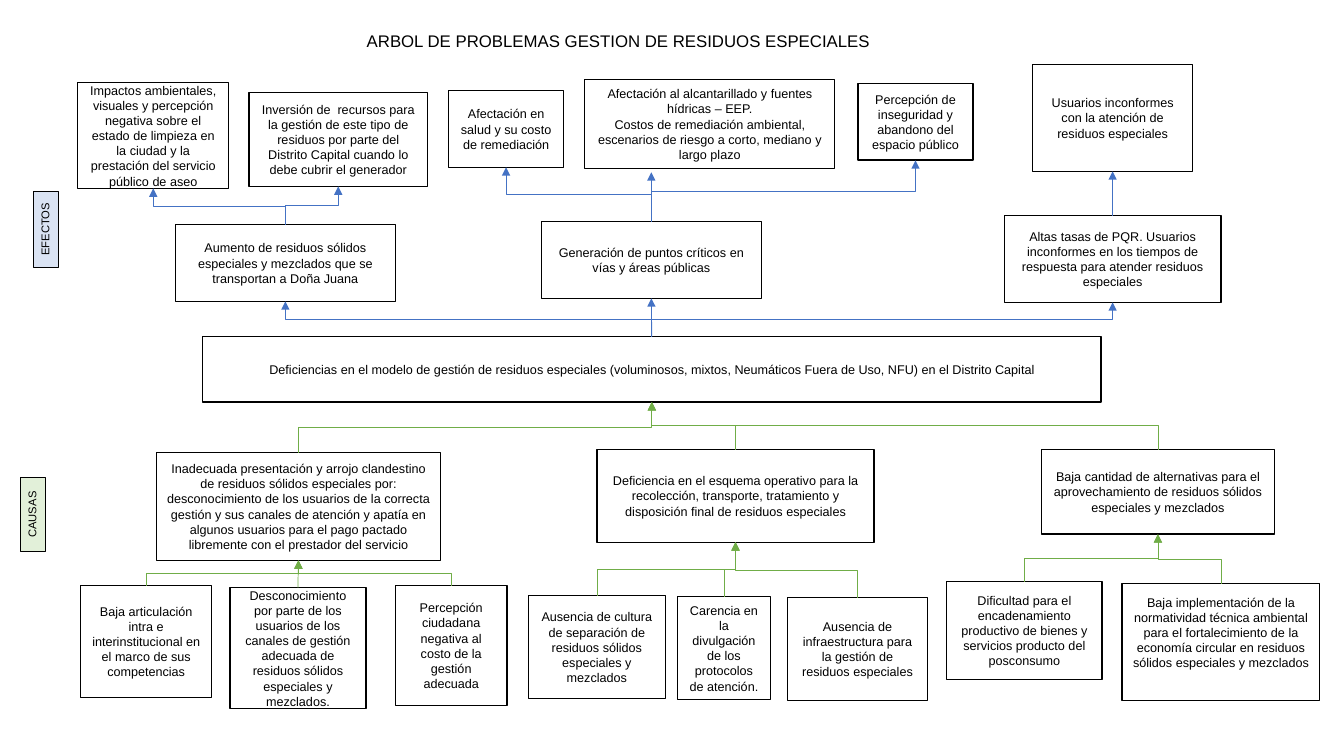
"""Build the problem tree slide on special waste management."""
from lxml import etree
from pptx import Presentation
from pptx import util as u
from pptx.dml.color import RGBColor
from pptx.enum import shapes, text
from pptx.oxml import ns

CELL = u.Inches(0.1)
BLACK, WHITE = "000000", "FFFFFF"
EFFECT_LINE, CAUSE_LINE = "4472C4", "70AD47"
TOP, BOTTOM = 0, 2

BOXES = {
    "problem": (20.1, 33.4, 89.1, 6.5, "Deficiencias en el modelo de gestión de residuos especiales (voluminosos, mixtos, Neumáticos Fuera de Uso, NFU) en el Distrito Capital"),
    "disposal": (17.4, 22.3, 21.8, 7.6, "Aumento de residuos sólidos especiales y mezclados que se transportan a Doña Juana"),
    "hotspots": (53.7, 22, 21.8, 7.6, "Generación de puntos críticos en vías y áreas públicas"),
    "complaints": (99.6, 21.4, 21.5, 8.6, "Altas tasas de PQR. Usuarios inconformes en los tiempos de respuesta para atender residuos especiales"),
    "impacts": (7.7, 8.2, 15, 10.5, "Impactos ambientales, visuales y percepción negativa sobre el estado de limpieza en la ciudad y la prestación del servicio público de aseo"),
    "spending": (24.7, 9.2, 17.7, 9.3, "Inversión de  recursos para la gestión de este tipo de residuos por parte del Distrito Capital cuando lo debe cubrir el generador"),
    "health": (44.5, 9, 11.4, 7.6, "Afectación en salud y su costo de remediación"),
    "water": (58, 7.9, 24.8, 8.8, "Afectación al alcantarillado y fuentes hídricas – EEP.\nCostos de remediación ambiental, escenarios de riesgo a corto, mediano y largo plazo"),
    "insecurity": (85.1, 8.3, 11.4, 7.6, "Percepción de inseguridad y abandono del espacio público"),
    "unhappy": (102.4, 6.4, 15.9, 10.6, "Usuarios inconformes con la atención de residuos especiales"),
    "dumping": (15.5, 44.9, 28.2, 10.7, "Inadecuada presentación y arrojo clandestino de residuos sólidos especiales por: desconocimiento de los usuarios de la correcta gestión y sus canales de atención y apatía en algunos usuarios para el pago pactado libremente con el prestador del servicio"),
    "operation": (59.2, 44.6, 27.5, 9.2, "Deficiencia en el esquema operativo para la recolección, transporte, tratamiento y disposición final de residuos especiales"),
    "recovery": (103.3, 44.6, 23.1, 8.4, "Baja cantidad de alternativas para el aprovechamiento de residuos sólidos especiales y mezclados"),
    "coordination": (8, 58.1, 13, 11.1, "Baja articulación intra e interinstitucional en el marco de sus competencias"),
    "unawareness": (22.8, 58.3, 13.5, 12, "Desconocimiento por parte de los usuarios de los canales de gestión adecuada de residuos sólidos especiales y mezclados."),
    "cost": (39.2, 58.1, 11.1, 11.9, "Percepción ciudadana negativa al costo de la gestión adecuada"),
    "separation": (52.4, 59.1, 13.6, 10.2, "Ausencia de cultura de separación de residuos sólidos especiales y mezclados"),
    "outreach": (67.2, 59.2, 9.2, 10.2, "Carencia en la divulgación de los protocolos de atención."),
    "facilities": (78.1, 59.3, 13.9, 10.2, "Ausencia de infraestructura para la gestión de residuos especiales"),
    "chains": (93.9, 57.7, 15.4, 9.7, "Dificultad para el encadenamiento productivo de bienes y servicios producto del posconsumo"),
    "rules": (111.3, 57.9, 19.6, 11.6, "Baja implementación de la normatividad técnica ambiental para el fortalecimiento de la economía circular en residuos sólidos especiales y mezclados"),
}

EFFECTS = {
    "problem": ("disposal", "complaints", "hotspots"),
    "hotspots": ("health", "insecurity"),
    "complaints": ("unhappy",),
    "disposal": ("impacts", "spending"),
}

CAUSES = {
    "problem": ("dumping", "operation", "recovery"),
    "dumping": ("coordination", "unawareness", "cost"),
    "operation": ("separation", "outreach", "facilities"),
    "recovery": ("chains", "rules"),
}


def cells(*counts):
    """Turn grid counts into lengths."""
    return [round(count * CELL) for count in counts]


def colour(value):
    """Turn a hex string into a colour."""
    return RGBColor.from_string(value)


def write(shape, words, size):
    """Fill a shape with centred black text."""
    frame = shape.text_frame
    frame.word_wrap = True
    frame.text = words
    for paragraph in frame.paragraphs:
        paragraph.alignment = text.PP_ALIGN.CENTER
        paragraph.font.name = "Arial"
        paragraph.font.size = u.Pt(size)
        paragraph.font.color.rgb = colour(BLACK)
    return frame


def add_box(slide, left, top, width, height, words, fill=WHITE, size=9, line=1):
    """Add an outlined rectangle with text in its middle."""
    shape = slide.shapes.add_shape(
        shapes.MSO_SHAPE.RECTANGLE, *cells(left, top, width, height))
    shape.shadow.inherit = False
    shape.fill.solid()
    shape.fill.fore_color.rgb = colour(fill)
    shape.line.color.rgb = colour(BLACK)
    shape.line.width = u.Pt(line)
    write(shape, words, size).vertical_anchor = text.MSO_ANCHOR.MIDDLE
    return shape


def add_side_label(slide, left, top, width, words, fill):
    """Add a label that reads upwards."""
    label = add_box(slide, left, top, width, 2.5, words, fill, 8, 0.75)
    label.rotation = 270
    label.text_frame.vertical_anchor = text.MSO_ANCHOR.TOP


def add_arrow(slide, kind, start, end, line_colour):
    """Add a thin connector with an arrowhead at its end."""
    connector = slide.shapes.add_connector(kind, *start, *end)
    connector.line.color.rgb = colour(line_colour)
    connector.line.width = u.Pt(0.5)
    outline = connector.line._get_or_add_ln()
    etree.SubElement(outline, ns.qn("a:tailEnd"), type="triangle")
    etree.SubElement(connector._element.spPr, ns.qn("a:effectLst"))
    return connector


def turn_upwards(connector, start, end):
    """Make an elbow leave and arrive vertically."""
    across, rise = abs(end[0] - start[0]), start[1] - end[1]
    connector.left = (start[0] + end[0] - rise) // 2
    connector.top = (start[1] + end[1] - across) // 2
    connector.width, connector.height = rise, across
    frame = connector._element.spPr.find(ns.qn("a:xfrm"))
    for flip in ("flipH", "flipV"):
        frame.attrib.pop(flip, None)
    frame.set("rot", str(270 * 60000))
    if end[0] < start[0]:
        frame.set("flipV", "1")


def add_link(slide, lower, upper, line_colour):
    """Join the top of one box to the bottom of another."""
    start = (lower.left + lower.width // 2, lower.top)
    end = (upper.left + upper.width // 2, upper.top + upper.height)
    straight = abs(start[0] - end[0]) < CELL * 0.2
    kind = shapes.MSO_CONNECTOR.STRAIGHT if straight else shapes.MSO_CONNECTOR.ELBOW
    connector = add_arrow(slide, kind, start, end, line_colour)
    connector.begin_connect(lower, TOP)
    connector.end_connect(upper, BOTTOM)
    if not straight:
        turn_upwards(connector, start, end)


def main():
    """Draw the tree and save it."""
    presentation = Presentation()
    presentation.slide_width = u.Inches(13.33)
    presentation.slide_height = u.Inches(7.5)
    slide = presentation.slides.add_slide(presentation.slide_layouts[6])

    title = slide.shapes.add_textbox(*cells(14.5, 2.6, 93.7, 3))
    write(title, "ARBOL DE PROBLEMAS GESTION DE RESIDUOS ESPECIALES", 12)
    boxes = {name: add_box(slide, *box) for name, box in BOXES.items()}
    boxes["rules"].text_frame.margin_bottom = u.Inches(0.24)
    add_side_label(slide, 0.8, 21.5, 7.5, "EFECTOS", "DAE3F3")
    add_side_label(slide, -0.4, 49.8, 7.3, "CAUSAS", "E2F0D9")

    for source, effects in EFFECTS.items():
        for effect in effects:
            add_link(slide, boxes[source], boxes[effect], EFFECT_LINE)
    hotspots_to_water = add_arrow(
        slide, shapes.MSO_CONNECTOR.STRAIGHT, cells(64.6, 22), cells(64.6, 17.1), EFFECT_LINE)
    hotspots_to_water.begin_connect(boxes["hotspots"], TOP)
    for result, causes in CAUSES.items():
        for cause in causes:
            add_link(slide, boxes[cause], boxes[result], CAUSE_LINE)

    presentation.save("out.pptx")


if __name__ == "__main__":
    main()
